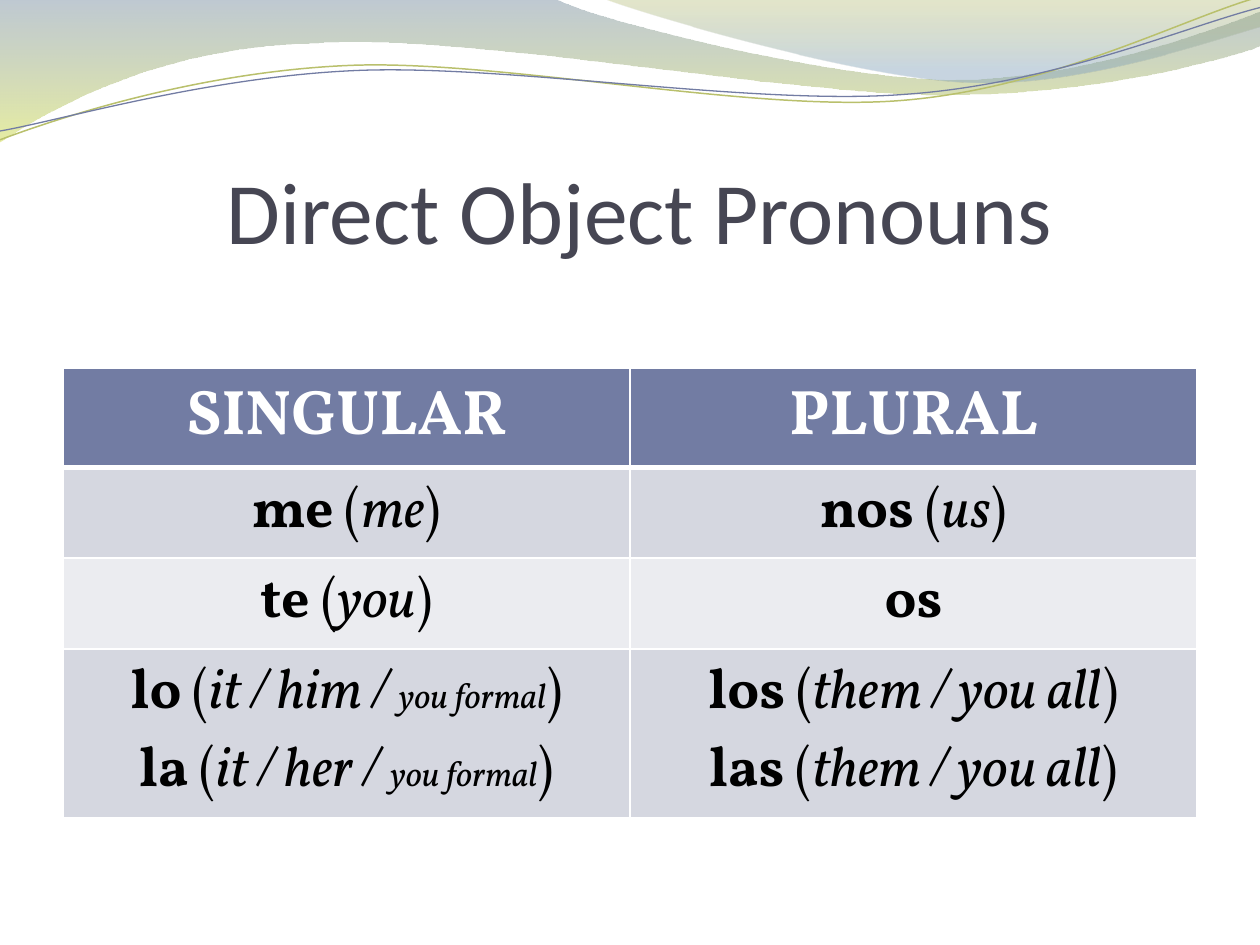
from dataclasses import dataclass

from lxml.etree import SubElement
from pptx import Presentation
from pptx.dml.color import RGBColor
from pptx.enum.text import MSO_ANCHOR, PP_ALIGN
from pptx.oxml.ns import qn
from pptx.slide import Slide
from pptx.util import Inches, Pt


@dataclass(frozen=True)
class Theme:
    title_font: str = "Calibri"
    table_font: str = "Vollkorn"
    title_size: int = 50
    header_size: int = 36
    body_size: int = 32
    small_size: int = 20
    title: str = "464653"
    text: str = "000000"
    white: str = "FFFFFF"
    accent: str = "727CA3"
    green: str = "B9C06C"
    bands: tuple = ("D5D7E0", "EBECF0")
    # Gradient stops: position, colour, opacity (percent)
    wave: tuple = ((0, "72889B", 45), (100, "D3DE57", 55))
    crest: tuple = ((0, "A4AC50", 30), (80, "84A3BD", 45))


# Each outline is a start point followed by line ends (2 numbers) or curves (6)
WAVE = [(0, 0), (4.4, -0.01), (4.76, 0.17, 6.64, 0.63, 7.58, 0.63),
        (8.53, 0.63, 9.58, 0.26, 10, 0.09), (10.01, 0.36),
        (9.83, 0.44, 8.7, 0.76, 7.46, 0.75), (6.22, 0.75, 3.82, 0.28, 2.57, 0.34),
        (1.29, 0.36, 0.46, 0.83, -0.01, 1.13), (0, 0)]
CREST = [(4.79, -0.01), (5.09, 0.11, 6.82, 0.62, 7.69, 0.65),
         (8.56, 0.69, 9.61, 0.32, 10, 0.21), (10, 0), (4.79, -0.01)]
GREEN_LINE = [(0, 1.11), (0.48, 0.93, 1.58, 0.57, 2.77, 0.52),
              (3.95, 0.47, 5.93, 0.89, 7.13, 0.8), (8.33, 0.71, 9.38, 0.15, 9.98, -0.02)]
BLUE_LINE = [(0, 1.04), (0.47, 0.96, 1.64, 0.61, 2.83, 0.56),
             (4.03, 0.51, 5.97, 0.84, 7.17, 0.75), (8.36, 0.67, 9.41, 0.21, 10, 0.06)]

# Each cell lists its lines as (pronoun, meaning, meaning in small type)
HEADERS = ["SINGULAR", "PLURAL"]
PRONOUNS = [
    [[("me", "me", "")], [("nos", "us", "")]],
    [[("te", "you", "")], [("os", "", "")]],
    [[("lo", "it / him / ", "you formal"), ("la", "it / her / ", "you formal")],
     [("los", "them / you all", ""), ("las", "them / you all", "")]],
]
ROW_HEIGHTS = [0.79, 0.72, 0.72, 1.34]


def add_span(para, text, *, font, size, color, bold=False, italic=False):
    span = para.add_run()
    span.text = text
    span.font.name = font
    span.font.size = Pt(size)
    span.font.color.rgb = RGBColor.from_string(color)
    span.font.bold = bold
    span.font.italic = italic


def bend(shape, segments):
    """Join the three lines that stand for each curve into one cubic curve."""
    lines = iter(list(shape._element.iter(qn("a:lnTo"))))
    for segment in segments:
        first = next(lines)
        if len(segment) == 6:
            first.tag = qn("a:cubicBezTo")
            for line in (next(lines), next(lines)):
                first.append(line[0])
                line.getparent().remove(line)


@dataclass
class Painter:
    theme: Theme
    slide: Slide

    def outline(self, outline, closed):
        points = [(Inches(segment[i]), Inches(segment[i + 1]))
                  for segment in outline for i in range(0, len(segment), 2)]
        builder = self.slide.shapes.build_freeform(*points[0])
        builder.add_line_segments(points[1:], close=closed)
        shape = builder.convert_to_shape()
        bend(shape, outline[1:])
        shape.shadow.inherit = False
        return shape

    def gradient_area(self, outline, stops):
        shape = self.outline(outline, closed=True)
        shape.line.fill.background()
        shape.fill.gradient()
        gradient = shape._element.spPr.find(qn("a:gradFill"))
        for child in list(gradient):
            gradient.remove(child)
        stop_list = SubElement(gradient, qn("a:gsLst"))
        for position, color, opacity in stops:
            stop = SubElement(stop_list, qn("a:gs"), pos=str(position * 1000))
            tint = SubElement(stop, qn("a:srgbClr"), val=color)
            SubElement(tint, qn("a:alpha"), val=str(opacity * 1000))
        SubElement(gradient, qn("a:lin"), ang=str(90 * 60000), scaled="0")

    def curve(self, outline, color, width):
        shape = self.outline(outline, closed=False)
        shape.fill.background()
        shape.line.color.rgb = RGBColor.from_string(color)
        shape.line.width = Pt(width)

    def title(self, text, left, top, width, height):
        box = self.slide.shapes.add_textbox(
            Inches(left), Inches(top), Inches(width), Inches(height))
        frame = box.text_frame
        frame.word_wrap = True
        frame.vertical_anchor = MSO_ANCHOR.BOTTOM
        frame.margin_left = frame.margin_right = frame.margin_bottom = 0
        frame.margin_top = Inches(0.05)
        para = frame.paragraphs[0]
        para.alignment = PP_ALIGN.CENTER
        add_span(para, text, font=self.theme.title_font,
                 size=self.theme.title_size, color=self.theme.title)

    def style_cell(self, cell, fill, top=1, bottom=1):
        properties = cell._tc.get_or_add_tcPr()
        for side, width in (("L", 1), ("R", 1), ("T", top), ("B", bottom)):
            border = SubElement(properties, qn(f"a:ln{side}"), w=str(Pt(width)))
            paint = SubElement(border, qn("a:solidFill"))
            SubElement(paint, qn("a:srgbClr"), val=self.theme.white)
        cell.fill.solid()
        cell.fill.fore_color.rgb = RGBColor.from_string(fill)

    def pronoun(self, para, word, meaning, small):
        theme = self.theme
        look = {"font": theme.table_font, "color": theme.text}
        body = {**look, "size": theme.body_size}
        para.alignment = PP_ALIGN.CENTER
        add_span(para, word, bold=True, **body)
        if meaning:
            add_span(para, " (", **body)
            add_span(para, meaning, italic=True, **body)
            if small:
                add_span(para, small, italic=True, size=theme.small_size, **look)
            add_span(para, ")", **body)

    def pronoun_table(self, headers, rows, left, top, width, heights):
        theme = self.theme
        table = self.slide.shapes.add_table(
            len(heights), len(headers), Inches(left), Inches(top),
            Inches(width), Inches(sum(heights))).table
        table.horz_banding = False
        for row, height in zip(table.rows, heights):
            row.height = Inches(height)

        for column, text in enumerate(headers):
            cell = table.cell(0, column)
            self.style_cell(cell, theme.accent, bottom=3)
            para = cell.text_frame.paragraphs[0]
            para.alignment = PP_ALIGN.CENTER
            add_span(para, text, font=theme.table_font, size=theme.header_size,
                     color=theme.white, bold=True)

        for index, row in enumerate(rows):
            for column, lines in enumerate(row):
                cell = table.cell(index + 1, column)
                self.style_cell(cell, theme.bands[index % 2], top=1 if index else 3)
                frame = cell.text_frame
                for number, line in enumerate(lines):
                    para = frame.add_paragraph() if number else frame.paragraphs[0]
                    self.pronoun(para, *line)


def main():
    deck = Presentation()
    deck.slide_width, deck.slide_height = Inches(10), Inches(7.5)
    theme = Theme()
    page = Painter(theme, deck.slides.add_slide(deck.slide_layouts[6]))

    # Waves across the top
    page.gradient_area(WAVE, theme.wave)
    page.gradient_area(CREST, theme.crest)
    page.curve(GREEN_LINE, theme.green, 0.85)
    page.curve(BLUE_LINE, theme.accent, 0.75)

    # Title and table
    page.title("Direct Object Pronouns", 0.58, 0.83, 9, 1.25)
    page.pronoun_table(HEADERS, PRONOUNS, 0.5, 2.92, 9, ROW_HEIGHTS)

    deck.save("out.pptx")


if __name__ == "__main__":
    main()
